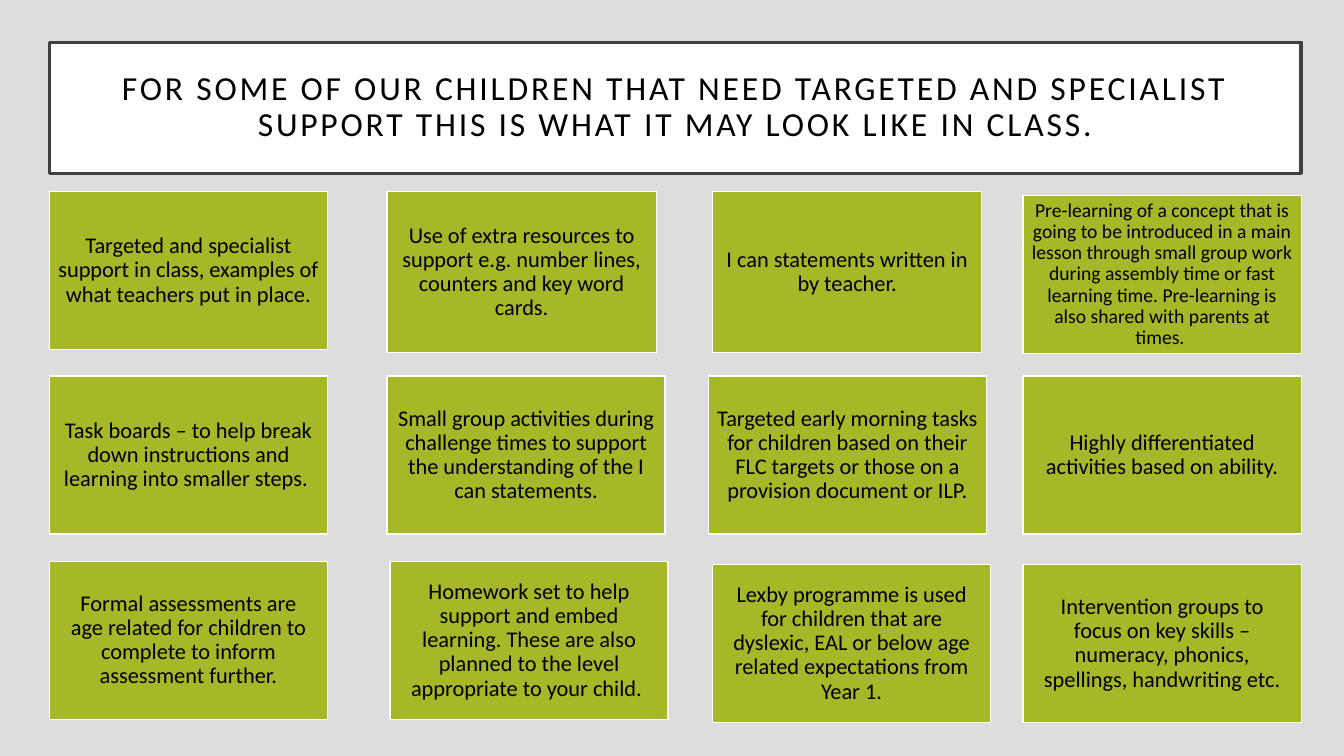
from pptx import Presentation
from pptx.dml.color import RGBColor
from pptx.enum.shapes import MSO_SHAPE
from pptx.enum.text import MSO_ANCHOR, MSO_AUTO_SIZE, PP_ALIGN
from pptx.util import Pt

BACKGROUND = RGBColor(0xDD, 0xDD, 0xDD)
GREEN = RGBColor(0xA6, 0xB7, 0x27)
WHITE = RGBColor(0xFF, 0xFF, 0xFF)
BLACK = RGBColor(0x00, 0x00, 0x00)
DARK_GREY = RGBColor(0x40, 0x40, 0x40)

FONT = "Calibri"
LEFT_EDGE, SECOND, THIRD, FOURTH = 35.3, 276.5, 509, 730.8
CARD_SIZE = (198.7, 113)
SMALL_CARD_SIZE = (192.3, 115.2)

TITLE = ("FOR SOME OF OUR CHILDREN THAT NEED TARGETED AND SPECIALIST "
         "SUPPORT THIS IS WHAT IT MAY LOOK LIKE IN CLASS.")

# Left, top, (width, height), text margin, font size, text
CARDS = [
    # Top row
    (LEFT_EDGE, 136.8, CARD_SIZE, 4.5, 16,
     "Targeted and specialist support in class, examples of what teachers "
     "put in place."),
    (SECOND, 136.8, SMALL_CARD_SIZE, 4.5, 16,
     "Use of extra resources to support e.g. number lines, counters and "
     "key word cards."),
    (THIRD, 136.8, SMALL_CARD_SIZE, 4.5, 16,
     "I can statements written in by teacher."),
    (FOURTH, 139.7, CARD_SIZE, 5.5, 14,
     "Pre-learning of a concept that is going to be introduced in a main "
     "lesson through small group work during assembly time or fast learning "
     "time. Pre-learning is also shared with parents at times. "),
    # Middle row
    (LEFT_EDGE, 268.6, CARD_SIZE, 4.5, 16,
     "Task boards – to help break down instructions and learning into "
     "smaller steps. "),
    (SECOND, 268.6, CARD_SIZE, 4.5, 16,
     "Small group activities during challenge times to support the "
     "understanding of the I can statements."),
    (506, 268.6, CARD_SIZE, 4.5, 16,
     "Targeted early morning tasks for children based on their FLC targets "
     "or those on a provision document or ILP."),
    (FOURTH, 268.6, CARD_SIZE, 5.5, 16,
     "Highly differentiated activities based on ability."),
    # Bottom row
    (LEFT_EDGE, 401, CARD_SIZE, 10, 16,
     "Formal assessments are age related for children to complete to inform "
     "assessment further."),
    (278.6, 401, CARD_SIZE, 5.5, 16,
     "Homework set to help support and embed learning. These are also "
     "planned to the level appropriate to your child. "),
    (THIRD, 403.2, CARD_SIZE, 8, 16,
     "Lexby programme is used for children that are dyslexic, EAL or below "
     "age related expectations from Year 1."),
    (FOURTH, 403.2, CARD_SIZE, 8, 16,
     "Intervention groups to focus on key skills – numeracy, phonics, "
     "spellings, handwriting etc."),
]


def write_text(shape, text, *, size, margin, letter_spacing=0):
    frame = shape.text_frame
    frame.word_wrap = True
    frame.auto_size = MSO_AUTO_SIZE.NONE
    frame.vertical_anchor = MSO_ANCHOR.MIDDLE
    frame.margin_left = frame.margin_right = Pt(margin)
    frame.margin_top = frame.margin_bottom = Pt(margin)
    paragraph = frame.paragraphs[0]
    paragraph.alignment = PP_ALIGN.CENTER
    paragraph.line_spacing = 0.9
    run = paragraph.add_run()
    run.text = text
    run.font.name = FONT
    run.font.size = Pt(size)
    run.font.color.rgb = BLACK
    if letter_spacing:
        # The spc attribute counts hundredths of a point
        run.font._element.set("spc", str(letter_spacing * 100))


def paint(shape, fill, line, line_width):
    shape.fill.solid()
    shape.fill.fore_color.rgb = fill
    shape.line.color.rgb = line
    shape.line.width = Pt(line_width)


def add_title(slide):
    title = slide.shapes.title
    title.left, title.top = Pt(LEFT_EDGE), Pt(30.2)
    title.width, title.height = Pt(894.2), Pt(93.6)
    paint(title, WHITE, DARK_GREY, 2.5)
    write_text(title, TITLE, size=24, margin=14.4, letter_spacing=2)


def add_card(slide, left, top, card_size, margin, font_size, text):
    width, height = card_size
    card = slide.shapes.add_shape(
        MSO_SHAPE.RECTANGLE, Pt(left), Pt(top), Pt(width), Pt(height))
    card.shadow.inherit = False
    paint(card, GREEN, WHITE, 1)
    write_text(card, text, size=font_size, margin=margin)


def main():
    presentation = Presentation()
    presentation.slide_width, presentation.slide_height = Pt(960), Pt(540)
    title_only = presentation.slide_layouts[5]
    slide = presentation.slides.add_slide(title_only)
    slide.background.fill.solid()
    slide.background.fill.fore_color.rgb = BACKGROUND

    add_title(slide)
    for card in CARDS:
        add_card(slide, *card)

    presentation.save("out.pptx")


if __name__ == "__main__":
    main()
